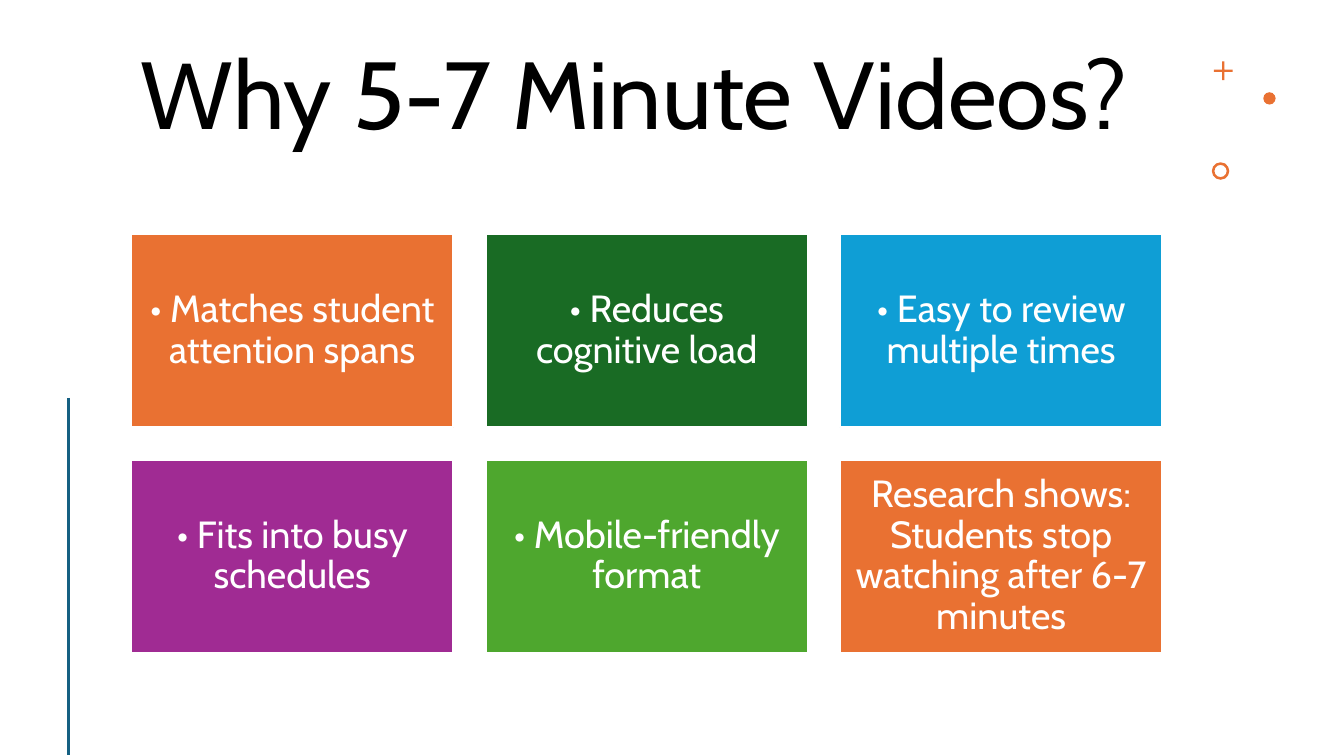
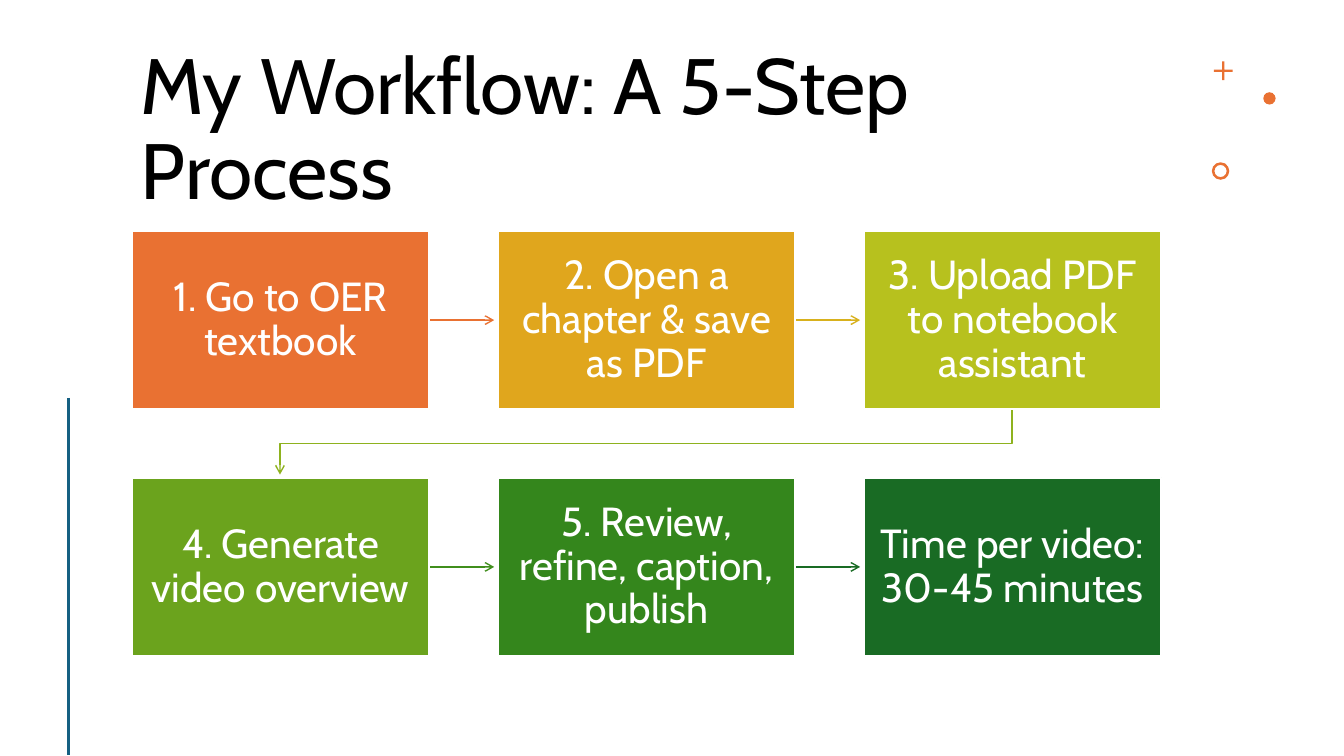
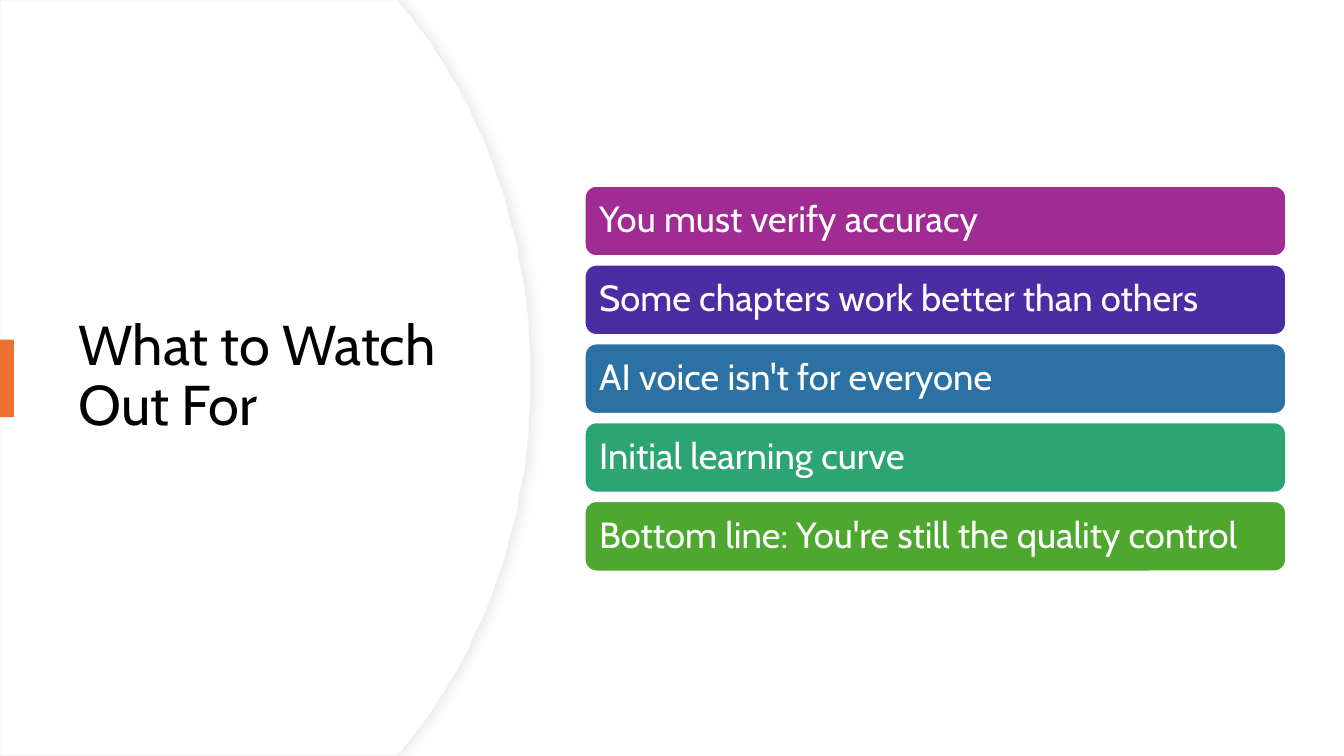
from lxml.etree import SubElement
from pptx import Presentation
from pptx.dml.color import RGBColor
from pptx.enum.shapes import MSO_CONNECTOR, MSO_SHAPE
from pptx.enum.text import MSO_ANCHOR, PP_ALIGN
from pptx.oxml.ns import qn
from pptx.util import Pt

HUES = {
    "white": "FFFFFF", "black": "000000", "orange": "E97132", "navy": "156082",
    "forest": "196B24", "sky": "0F9ED5", "plum": "A02B93", "green": "4EA72E",
    "gold": "E0A61D", "lime": "B7C11E", "leaf": "6BA31D", "fern": "34861C",
    "violet": "4B2CA2", "steel": "2C71A4", "jade": "2DA573",
    "amber": "D8B11D", "moss": "8EB21E", "grass": "408E1C",
    "edge": "EFEFEF", "shade": "D9D9D9",
}
FONT = "Cabin"
HEAD = {"vertical_anchor": MSO_ANCHOR.TOP}
SIDE = {"vertical_anchor": MSO_ANCHOR.MIDDLE}


def hue(name):
    return RGBColor.from_string(HUES[name])


def apply(item, style):
    for key, value in style.items():
        setattr(item, key, value)


def pad(x, y):
    """Frame style with a middle anchor and the given insets."""
    return {"vertical_anchor": MSO_ANCHOR.MIDDLE,
            "margin_left": Pt(x), "margin_right": Pt(x),
            "margin_top": Pt(y), "margin_bottom": Pt(y)}


def write(shape, words, size, ink, style, align=PP_ALIGN.LEFT):
    frame = shape.text_frame
    apply(frame, {"word_wrap": True, **style})
    para = frame.paragraphs[0]
    apply(para, {"text": words, "alignment": align, "line_spacing": 0.9})
    apply(para.font, {"name": FONT, "size": Pt(size)})
    para.font.color.rgb = hue(ink)


def stroke(line, color, width):
    line.color.rgb = hue(color)
    line.width = Pt(width)


def block(slide, kind, box, fill, border=0):
    shape = slide.shapes.add_shape(kind, *map(Pt, box))
    shape.shadow.inherit = False
    shape.fill.solid()
    shape.fill.fore_color.rgb = hue(fill)
    if border:
        stroke(shape.line, "white", border)
    else:
        shape.line.fill.background()
    return shape


def rule(slide, start, end, color, width):
    line = slide.shapes.add_connector(
        MSO_CONNECTOR.STRAIGHT, *map(Pt, start + end))
    stroke(line.line, color, width)
    SubElement(line._element.spPr, qn("a:effectLst"))
    return line


def tip(shape):
    """Open arrowhead at the far end."""
    line = shape._element.spPr.find(qn("a:ln"))
    SubElement(line, qn("a:tailEnd"), type="arrow")


def outline(slide, points, close):
    pen = slide.shapes.build_freeform(*points[0], scale=12700)
    pen.add_line_segments(points[1:], close=close)
    shape = pen.convert_to_shape()
    shape.shadow.inherit = False
    return shape


def title(slide, box, words, size, style):
    area = slide.shapes.add_textbox(*map(Pt, box))
    write(area, words, size, "black", style)


def marks(slide, left, top):
    """Plus, dot and ring in the upper right corner."""
    for kind, x, y, size, adjust in (
            (MSO_SHAPE.CROSS, 1.4, 0, 13.4, 0.44),
            (MSO_SHAPE.OVAL, 36.8, 22, 8.8, None),
            (MSO_SHAPE.DONUT, 0, 72, 12.5, 0.15)):
        mark = block(slide, kind, (left + x, top + y, size, size), "orange")
        if adjust:
            mark.adjustments[0] = adjust


def page(deck, words, size):
    """Slide with a top title, corner marks and a side rule."""
    slide = deck.slides.add_slide(deck.slide_layouts[6])
    title(slide, (93.6, 30.2, 736.6, 94.3), words, size, HEAD)
    marks(slide, 865.6, 43.9)
    rule(slide, (48.8, 284.2), (48.8, 539.5), "navy", 2)
    return slide


def grid(box, gap, cols=3, rows=2):
    """Equal cells filling the box, row by row."""
    left, top, width, height = box
    wide = (width - gap * (cols - 1)) / cols
    high = (height - gap * (rows - 1)) / rows
    return [(left + c * (wide + gap), top + r * (high + gap), wide, high)
            for r in range(rows) for c in range(cols)]


def cards(slide, box, items):
    for cell, (words, fill) in zip(grid(box, 22.9), items):
        card = block(slide, MSO_SHAPE.RECTANGLE, cell, fill, 1.5)
        write(card, words, 27, "white", pad(8, 8), PP_ALIGN.CENTER)


def link(slide, cell, after, gap, color):
    """Arrow from one step to the next, bent where the row ends."""
    left, top, wide, high = cell
    reach = gap - 2.7
    if after[1] == top:
        mid = top + high / 2
        start = left + wide
        arrow = rule(slide, (start, mid), (start + reach, mid), color, 1)
    else:
        foot = top + high
        x, end = left + wide / 2, after[0] + after[2] / 2
        turn = foot + gap / 2
        arrow = outline(slide, [(x, foot), (x, turn), (end, turn),
                                (end, foot + reach)], False)
        arrow.fill.background()
        stroke(arrow.line, color, 1)
    tip(arrow)


def steps(slide, box, items, links):
    gap = 49
    cells = grid(box, gap)
    for i, (words, fill) in enumerate(items):
        if i < len(links):
            link(slide, cells[i], cells[i + 1], gap, links[i])
        step = block(slide, MSO_SHAPE.RECTANGLE, cells[i], fill, 1.5)
        write(step, words, 29, "white", pad(10.2, 10.9), PP_ALIGN.CENTER)


def bars(slide, box, items):
    for cell, (words, fill) in zip(grid(box, 5.9, 1, len(items)), items):
        bar = block(slide, MSO_SHAPE.ROUNDED_RECTANGLE, cell, fill, 1.5)
        write(bar, words, 26, "white", pad(8, 8))


def curve(a, b, c, d, count=32):
    """Points along a cubic curve."""
    def at(t):
        u = 1 - t
        return tuple(u**3 * p + 3 * u * u * t * q + 3 * u * t * t * r + t**3 * s
                     for p, q, r, s in zip(a, b, c, d))
    return [at(i / count) for i in range(count + 1)]


def panel(slide, width, height):
    """White side panel with a bowed right edge and a soft shadow."""
    half = height / 2
    upper = [(width - 95.7, 0)] + curve(
        (width - 90.7, 5.8), (width - 34.6, 73.4),
        (width, half - 103), (width, half))
    lower = [(x, height - y) for x, y in reversed(upper[:-1])]
    shape = outline(slide, [(0, 0)] + upper + lower + [(0, height)], True)
    shape.fill.solid()
    shape.fill.fore_color.rgb = hue("white")
    stroke(shape.line, "edge", 0.75)
    effects = shape._element.spPr.find(qn("a:effectLst"))
    shadow = SubElement(effects, qn("a:outerShdw"), blurRad=str(Pt(7)),
                        dist=str(Pt(3)), dir="0", algn="l", rotWithShape="0")
    color = SubElement(shadow, qn("a:srgbClr"), val=HUES["shade"])
    SubElement(color, qn("a:alpha"), val="50000")


def main():
    deck = Presentation()
    apply(deck, {"slide_width": Pt(960), "slide_height": Pt(540)})

    # Reasons
    slide = page(deck, "Why 5-7 Minute Videos?", 68)
    cards(slide, (93.6, 167.2, 736.6, 299.2), [
        ("• Matches student attention spans", "orange"),
        ("• Reduces cognitive load", "forest"),
        ("• Easy to review multiple times", "sky"),
        ("• Fits into busy schedules", "plum"),
        ("• Mobile-friendly format", "green"),
        ("Research shows: Students stop watching after 6-7 minutes", "orange"),
    ])

    # Workflow
    slide = page(deck, "My Workflow: A 5-Step Process", 56)
    steps(slide, (94.3, 165, 735.2, 303.6), [
        ("1. Go to OER textbook", "orange"),
        ("2. Open a chapter & save as PDF", "gold"),
        ("3. Upload PDF to notebook assistant", "lime"),
        ("4. Generate video overview", "leaf"),
        ("5. Review, refine, caption, publish", "fern"),
        ("Time per video: 30-45 minutes", "forest"),
    ], ["orange", "amber", "moss", "grass", "forest"])

    # Cautions
    slide = deck.slides.add_slide(deck.slide_layouts[6])
    panel(slide, 379.4, 540)
    title(slide, (49, 91.4, 283.7, 356.4), "What to Watch Out For", 40, SIDE)
    block(slide, MSO_SHAPE.RECTANGLE, (0, 242.6, 10, 55.4), "orange")
    bars(slide, (417.6, 132.7, 501.1, 275.6), [
        ("You must verify accuracy", "plum"),
        ("Some chapters work better than others", "violet"),
        ("AI voice isn't for everyone", "steel"),
        ("Initial learning curve", "jade"),
        ("Bottom line: You're still the quality control", "green"),
    ])

    deck.save("out.pptx")


if __name__ == "__main__":
    main()
